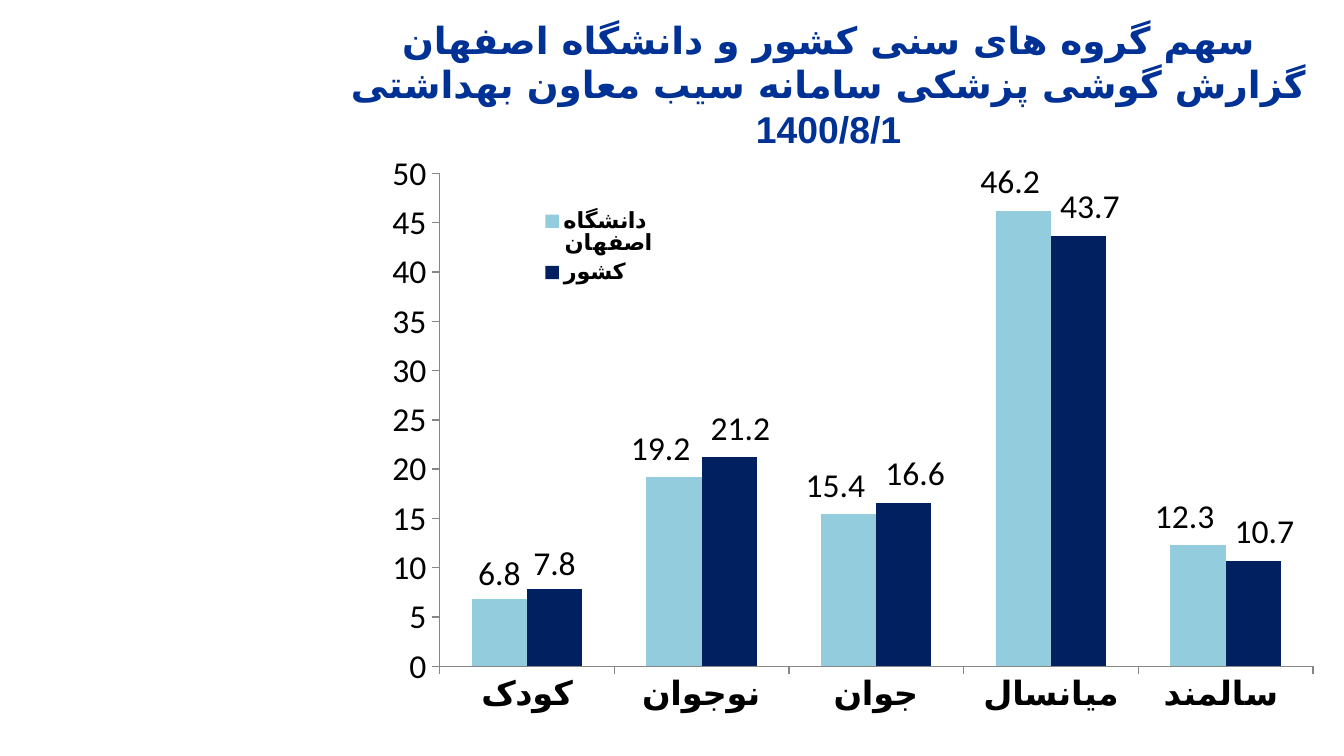
from lxml.etree import SubElement
from pptx import Presentation
from pptx.chart.data import CategoryChartData as ChartData
from pptx.dml.color import RGBColor
from pptx.enum.chart import XL_CHART_TYPE as Kind
from pptx.enum.chart import XL_LABEL_POSITION as LabelPos
from pptx.enum.chart import XL_LEGEND_POSITION as LegendPos
from pptx.enum.chart import XL_TICK_MARK as Tick
from pptx.enum.text import MSO_ANCHOR as Anchor
from pptx.enum.text import PP_ALIGN as Align
from pptx.oxml.ns import qn
from pptx.util import Pt

BLUE = RGBColor(0x00, 0x32, 0x96)
SKY = RGBColor(0x93, 0xCD, 0xDD)
NAVY = RGBColor(0x00, 0x20, 0x60)
BLACK = RGBColor(0, 0, 0)
GREY = RGBColor(0x86, 0x86, 0x86)
FONT = "Calibri"

# lines of (text, font for complex script)
TITLE = [
    [("سهم گروه های سنی کشور و دانشگاه اصفهان", "DejaVu Sans")],
    [("گزارش گوشی پزشکی سامانه سیب معاون بهداشتی ", "DejaVu Sans"),
     ("1400/8/1", "Arial")],
]
AGES = ["کودک", "نوجوان", "جوان", "میانسال", "سالمند "]
# name, values, colour, sideways shift of the labels in points
SERIES = [
    ("دانشگاه اصفهان", [6.8, 19.2, 15.4, 46.2, 12.3], SKY, -7),
    ("کشور", [7.8, 21.2, 16.6, 43.7, 10.7], NAVY, 6),
]
TITLE_BOX = (179.28, 22.32, 529.2, 45.36)
CHART_BOX = (203.76, 82.08, 504.72, 312.48)
PLOT = {"x": 0.063, "y": 0.028, "w": 0.927, "h": 0.851}
LEGEND = {"x": 0.167, "y": 0.08, "w": 0.13, "h": 0.15}
LABEL_RISE = -2


def style(font, size, color=BLACK, bold=False):
    font.name, font.size, font.bold = FONT, Pt(size), bold
    font.color.rgb = color


def add_text(slide, lines, box, size, color, bold=False):
    """Add centred right-to-left text."""
    frame = slide.shapes.add_textbox(*map(Pt, box)).text_frame
    frame.word_wrap = True
    frame.vertical_anchor = Anchor.MIDDLE
    para = frame.paragraphs[0]
    para.alignment = Align.CENTER
    para._p.get_or_add_pPr().set("rtl", "1")
    for i, line in enumerate(lines):
        if i:
            para.add_line_break()
        for text, script in line:
            run = para.add_run()
            run.text = text
            style(run.font, size, color, bold)
            props = run._r.get_or_add_rPr()
            props.set("lang", "fa-IR")
            SubElement(props, qn("a:cs")).set("typeface", script)
    for gap in para._p.findall(qn("a:br")):
        SubElement(gap, qn("a:rPr")).set("sz", str(size * 100))


def place(parent, index, parts, edge=False, inner=False):
    """Put a manual layout at the given child index of a chart element."""
    for old in parent.findall(qn("c:layout")):
        parent.remove(old)
    layout = SubElement(parent, qn("c:layout"))
    manual = SubElement(layout, qn("c:manualLayout"))
    if inner:
        SubElement(manual, qn("c:layoutTarget")).set("val", "inner")
    if edge:
        for mode in ("xMode", "yMode"):
            SubElement(manual, qn("c:" + mode)).set("val", "edge")
    for key, val in parts.items():
        SubElement(manual, qn("c:" + key)).set("val", str(val))
    parent.insert(index, layout)


def style_axes(chart):
    ages, scale = chart.category_axis, chart.value_axis
    for axis, bold in ((ages, True), (scale, False)):
        axis.major_tick_mark = Tick.OUTSIDE
        axis.minor_tick_mark = Tick.NONE
        axis.has_major_gridlines = False
        axis.format.line.color.rgb = GREY
        axis.format.line.width = Pt(0.75)
        style(axis.tick_labels.font, 18, bold=bold)
    scale.minimum_scale, scale.maximum_scale, scale.major_unit = 0, 50, 5


def style_bars(plot):
    plot.gap_width, plot.overlap = 116, 0
    plot.vary_by_categories = False
    for bars, (_, vals, color, shift) in zip(plot.series, SERIES):
        bars.format.fill.solid()
        bars.format.fill.fore_color.rgb = color
        labels = bars.data_labels
        labels.show_value = True
        labels.position = LabelPos.OUTSIDE_END
        style(labels.font, 18)
        for i in range(1, len(vals)):
            label = bars.points[i].data_label
            label.position = LabelPos.OUTSIDE_END
            style(label.font, 18)
        move = {"x": round(shift / CHART_BOX[2], 3),
                "y": round(LABEL_RISE / CHART_BOX[3], 3)}
        for item in bars._element.iter(qn("c:dLbl")):
            place(item, 1, move)


def add_bars(slide):
    data = ChartData(number_format="General")
    data.categories = AGES
    for name, vals, *_ in SERIES:
        data.add_series(name, vals)
    chart = slide.shapes.add_chart(
        Kind.COLUMN_CLUSTERED, *map(Pt, CHART_BOX), data).chart
    chart.has_title = False
    style(chart.font, 18)
    style_axes(chart)
    style_bars(chart.plots[0])
    chart.has_legend = True
    legend = chart.legend
    legend.position = LegendPos.RIGHT
    legend.include_in_layout = False
    style(legend.font, 12, bold=True)
    place(legend._element, 1, LEGEND, edge=True)
    area = chart._chartSpace.find(".//" + qn("c:plotArea"))
    place(area, 0, PLOT, edge=True, inner=True)


def main():
    deck = Presentation()
    deck.slide_width, deck.slide_height = Pt(720), Pt(405)
    slide = deck.slides.add_slide(deck.slide_layouts[6])
    add_text(slide, TITLE, TITLE_BOX, 20, BLUE, bold=True)
    add_bars(slide)
    deck.save("out.pptx")


if __name__ == "__main__":
    main()
